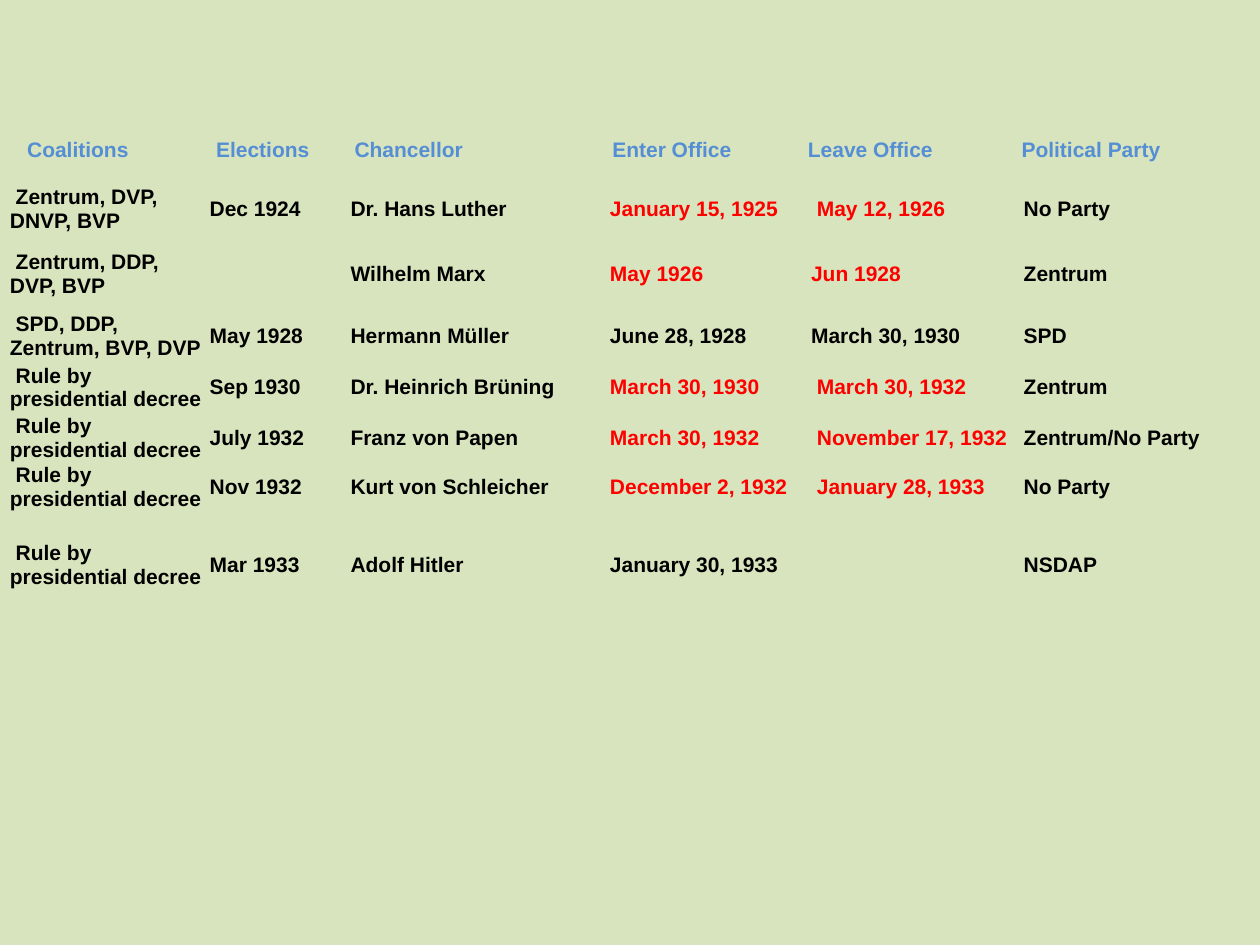
from dataclasses import dataclass

from pptx import Presentation
from pptx.dml.color import RGBColor
from pptx.enum.text import MSO_ANCHOR as Anchor
from pptx.oxml.ns import qn
from pptx.util import Cm, Pt

COLORS = {"page": "D7E4BD", "header": "558ED5", "text": "000000", "changed": "FF0000"}
FONT = "Arial"
NO_STYLE = "{2D5ABB26-0587-4C30-8999-92F81FD0307C}"
HARD_SPACE = chr(160)
DECREE = "Rule by presidential decree"


@dataclass
class Entry:
    text: str
    color: str = "text"
    lead: int = 1


@dataclass
class Government:
    height: float
    coalition: str
    election: str
    chancellor: str
    enter: str
    leave: str
    party: str
    date_color: str = "changed"
    leave_lead: int = 1

    def entries(self) -> list[Entry]:
        return [
            Entry(self.coalition),
            Entry(self.election),
            Entry(self.chancellor),
            Entry(self.enter, self.date_color),
            Entry(self.leave, self.date_color, self.leave_lead),
            Entry(self.party),
        ]


@dataclass
class Grid:
    left: float
    top: float
    widths: list[float]
    heights: list[float]
    rows: list[list[Entry]]


GOVERNMENTS = [
    Government(1.22, "Zentrum, DVP, DNVP, BVP", "Dec 1924", "Dr. Hans Luther",
               "January 15, 1925", "May 12, 1926", "No Party"),
    Government(1.4, "Zentrum, DDP, DVP, BVP", "", "Wilhelm Marx",
               "May 1926", "Jun 1928", "Zentrum", leave_lead=0),
    Government(1.09, "SPD, DDP, Zentrum, BVP, DVP", "May 1928", "Hermann Müller",
               "June 28, 1928", "March 30, 1930", "SPD", "text", 0),
    Government(0.99, DECREE, "Sep 1930", "Dr. Heinrich Brüning",
               "March 30, 1930", "March 30, 1932", "Zentrum"),
    Government(1.04, DECREE, "July 1932", "Franz von Papen",
               "March 30, 1932", "November 17, 1932", "Zentrum/No Party"),
    Government(0.94, DECREE, "Nov 1932", "Kurt von Schleicher",
               "December 2, 1932", "January 28, 1933", "No Party"),
    Government(2.18, DECREE, "Mar 1933", "Adolf Hitler",
               "January 30, 1933", "", "NSDAP", "text"),
]

HEADINGS = [
    Entry("Coalitions", "header"),
    Entry("Elections", "header"),
    Entry("Chancellor", "header"),
    Entry("Enter Office", "header", 2),
    Entry("Leave Office", "header"),
    Entry("Political Party", "header", 2),
]

GRIDS = [
    Grid(0.2, 3.61, [3.91, 2.84, 5.23, 4.17, 4.17, 4.17],
         [government.height for government in GOVERNMENTS],
         [government.entries() for government in GOVERNMENTS]),
    Grid(0.43, 2.54, [3.81, 2.79, 5.08, 4.06, 4.19, 3.91], [0.99], [HEADINGS]),
]


def fill_cell(cell, entry: Entry) -> None:
    cell.fill.background()
    cell.vertical_anchor = Anchor.MIDDLE
    cell.margin_left = cell.margin_right = cell.margin_top = cell.margin_bottom = 0
    para = cell.text_frame.paragraphs[0]
    para.font.size = Pt(12)
    if not entry.text:
        return
    span = para.add_run()
    span.text = HARD_SPACE * entry.lead + entry.text
    span.font.name = FONT
    span.font.size = Pt(12)
    span.font.bold = True
    span.font.color.rgb = RGBColor.from_string(COLORS[entry.color])


def draw_grid(page, grid: Grid) -> None:
    frame = page.shapes.add_table(
        len(grid.heights), len(grid.widths), Cm(grid.left), Cm(grid.top),
        Cm(sum(grid.widths)), Cm(sum(grid.heights)))
    table = frame.table
    table.first_row = table.horz_banding = False
    next(frame.element.iter(qn("a:tableStyleId"))).text = NO_STYLE
    for column, width in zip(table.columns, grid.widths):
        column.width = Cm(width)
    for row, height, entries in zip(table.rows, grid.heights, grid.rows):
        row.height = Cm(height)
        for cell, entry in zip(row.cells, entries):
            fill_cell(cell, entry)


def main() -> None:
    deck = Presentation()
    deck.slide_width, deck.slide_height = Cm(25.4), Cm(19.05)
    page = deck.slides.add_slide(deck.slide_layouts[6])
    page.background.fill.solid()
    page.background.fill.fore_color.rgb = RGBColor.from_string(COLORS["page"])
    for grid in GRIDS:
        draw_grid(page, grid)
    deck.save("out.pptx")


if __name__ == "__main__":
    main()
